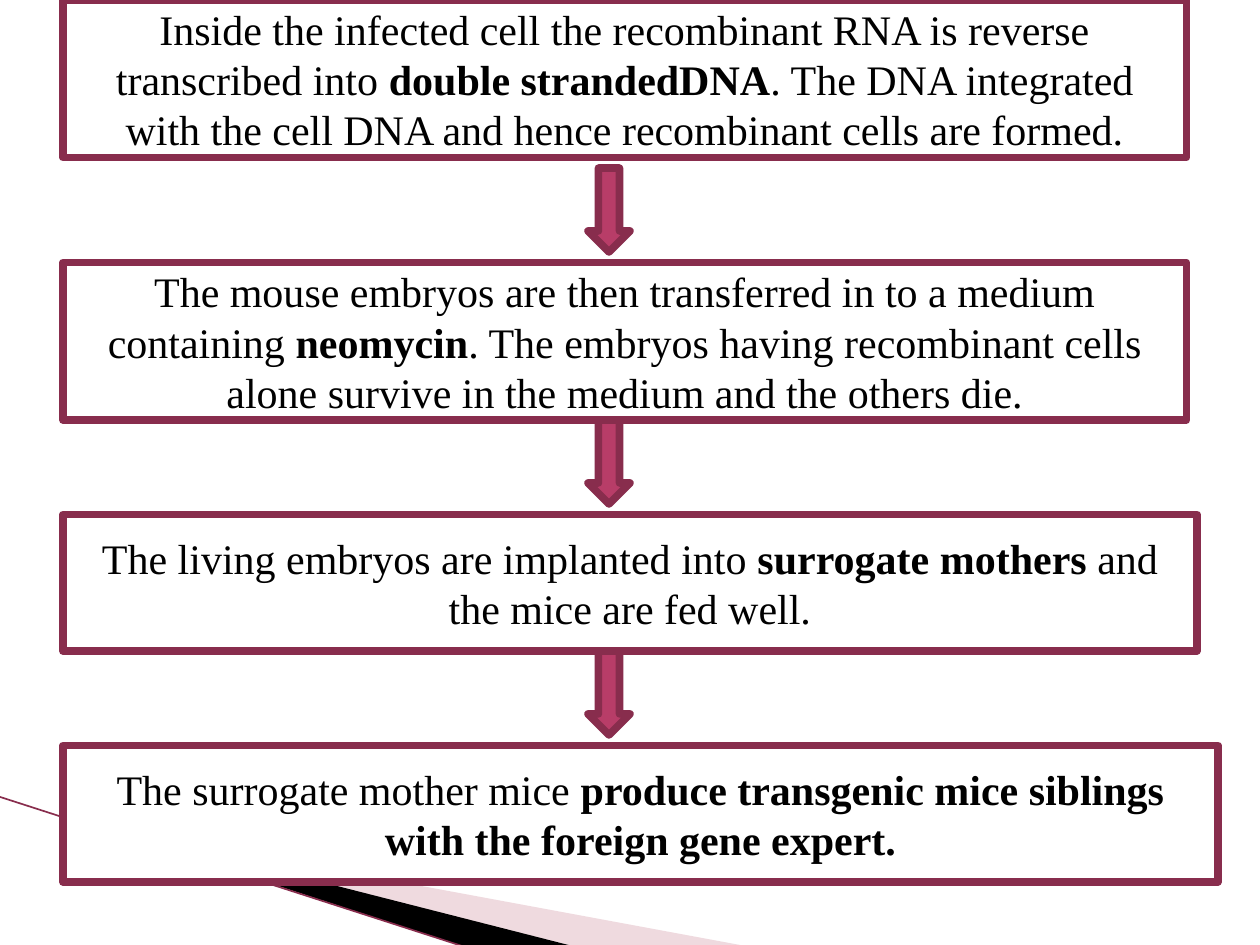
from itertools import pairwise

from lxml.etree import SubElement
from pptx import Presentation
from pptx.dml.color import RGBColor
from pptx.enum.shapes import MSO_CONNECTOR, MSO_SHAPE
from pptx.enum.text import MSO_ANCHOR, PP_ALIGN
from pptx.oxml.ns import qn
from pptx.util import Inches, Pt

WHITE = RGBColor(0xFF, 0xFF, 0xFF)
BLACK = RGBColor(0x00, 0x00, 0x00)
ROSE = RGBColor(0xD8, 0xA3, 0xAF)
PINK = RGBColor(0xB8, 0x3D, 0x68)
MAROON = RGBColor(0x88, 0x2D, 0x4D)

CELL = Inches(1) / 12
ARROW_COLUMNS, ARROW_ROWS = 4, 8
BODY_FONT = {"name": "Times New Roman", "size": Pt(24)}

STEPS = [
    (107, 15, [
        ("Inside the infected cell the recombinant RNA is reverse transcribed into ", False),
        ("double strandedDNA", True),
        (". The DNA integrated with the cell DNA and hence recombinant cells are formed.", False),
    ]),
    (107, 15, [
        ("The mouse embryos are then transferred in to a medium containing ", False),
        ("neomycin", True),
        (". The embryos having recombinant cells alone survive in the medium and the others die.", False),
    ]),
    (108, 13, [
        ("The living embryos are implanted into ", False),
        ("surrogate mothers ", True),
        ("and the mice are fed well.", False),
    ]),
    (110, 13, [
        ("The surrogate mother mice ", False),
        ("produce transgenic mice siblings with the foreign gene expert.", True),
    ]),
]
STEP_ROWS = [0, 25, 49, 71]

WEDGES = [
    (ROSE, 40, [(0.09, 0.21), (0.99, 1.01), (0.76, 1.01)]),
    (BLACK, 100, [(0.09, 0.19), (0.76, 1.01), (0.62, 1.02)]),
]
EDGE = [(0, 0.06), (0.62, 1.02)]


def grid(*counts):
    """Turn counts of columns or rows into lengths."""
    return [round(count * CELL) for count in counts]


def paint(shape, fill_color):
    """Give a shape its fill and the maroon outline."""
    shape.shadow.inherit = False
    shape.fill.solid()
    shape.fill.fore_color.rgb = fill_color
    shape.line.color.rgb = MAROON
    shape.line.width = Pt(4.33)


def add_backdrop(slide, left, top, width, height):
    """Draw the corner wedges and the thin edge inside a box."""
    def place(point):
        return round(left + point[0] * width), round(top + point[1] * height)

    for color, opacity, shares in WEDGES:
        start, *others = map(place, shares)
        builder = slide.shapes.build_freeform(*start)
        builder.add_line_segments(others, close=True)
        wedge = builder.convert_to_shape()
        wedge.shadow.inherit = False
        wedge.fill.solid()
        wedge.fill.fore_color.rgb = color
        wedge.line.fill.background()
        if opacity < 100:
            color_element = wedge._element.spPr.find(qn("a:solidFill"))[0]
            SubElement(color_element, qn("a:alpha"), val=str(opacity * 1000))

    start, end = map(place, EDGE)
    edge = slide.shapes.add_connector(MSO_CONNECTOR.STRAIGHT, *start, *end)
    edge.line.color.rgb = MAROON
    edge.line.width = Pt(0.95)
    SubElement(edge._element.spPr, qn("a:effectLst"))


def add_step(slide, left, top, width, height, runs):
    """Add one outlined step with centred text."""
    step = slide.shapes.add_shape(MSO_SHAPE.RECTANGLE, left, top, width, height)
    paint(step, WHITE)
    step.text_frame.word_wrap = True
    step.text_frame.vertical_anchor = MSO_ANCHOR.MIDDLE
    paragraph = step.text_frame.paragraphs[0]
    paragraph.alignment = PP_ALIGN.CENTER
    for text, bold in runs:
        run = paragraph.add_run()
        run.text = text
        for attribute, value in {**BODY_FONT, "bold": bold}.items():
            setattr(run.font, attribute, value)
        run.font.color.rgb = BLACK


def add_flow(slide, left_column, arrow_column):
    """Stack the steps and set an arrow one row above each following step."""
    for row, (columns, rows, runs) in zip(STEP_ROWS, STEPS):
        add_step(slide, *grid(left_column, row, columns, rows), runs)
    for _, next_row in pairwise(STEP_ROWS):
        arrow = slide.shapes.add_shape(
            MSO_SHAPE.DOWN_ARROW,
            *grid(arrow_column, next_row - 1 - ARROW_ROWS, ARROW_COLUMNS, ARROW_ROWS),
        )
        paint(arrow, PINK)


def main():
    """Build and save the presentation."""
    presentation = Presentation()
    presentation.slide_width, presentation.slide_height = grid(120, 90)
    slide = presentation.slides.add_slide(presentation.slide_layouts[6])
    add_backdrop(slide, *grid(0, 75, 72, 15))
    add_flow(slide, left_column=6, arrow_column=56)
    presentation.save("out.pptx")


if __name__ == "__main__":
    main()
